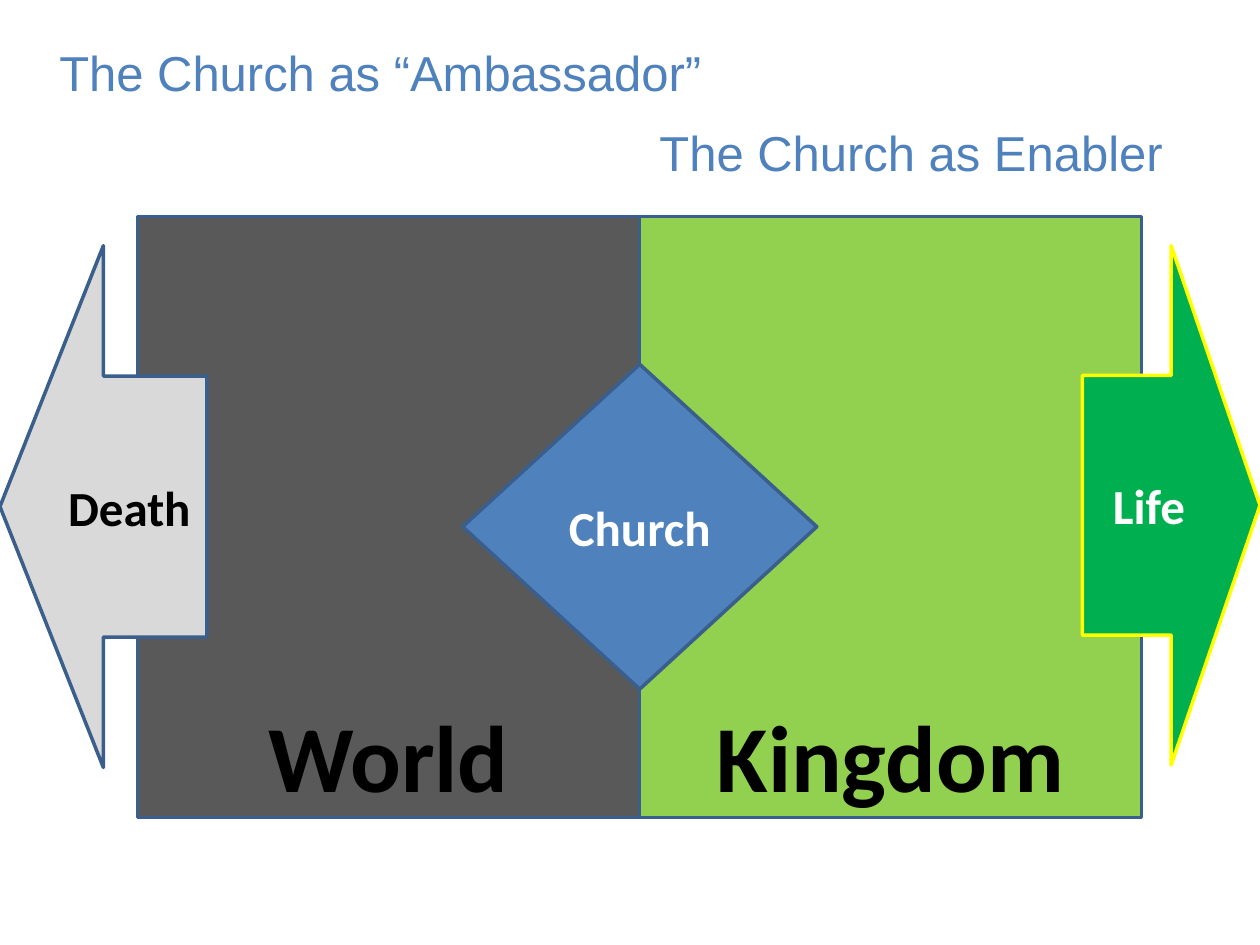
from pptx import Presentation
from pptx.dml.color import RGBColor
from pptx.enum.shapes import MSO_SHAPE as Kind
from pptx.enum.text import MSO_ANCHOR as Anchor, MSO_AUTO_SIZE as Fit, PP_ALIGN as Align
from pptx.util import Pt

BLUE, NAVY = "4F81BD", "3A5F8C"
BLACK, WHITE = "000000", "FFFFFF"


def rgb(code):
    return RGBColor.from_string(code)


def place(box):
    return [Pt(n) for n in box]


def write(frame, text, name, size, color, bold=False):
    """Fill the first paragraph of a frame and return it."""
    frame.word_wrap = True
    para = frame.paragraphs[0]
    para.text = text
    font = para.font
    font.name, font.size, font.bold = name, Pt(size), bold
    font.color.rgb = rgb(color)
    return para


def block(slide, kind, box, text, fill, color, size=28, line=NAVY, anchor=Anchor.MIDDLE):
    """Add a filled, outlined shape with a centred bold label."""
    shape = slide.shapes.add_shape(kind, *place(box))
    shape.shadow.inherit = False
    shape.fill.solid()
    shape.fill.fore_color.rgb = rgb(fill)
    shape.line.color.rgb = rgb(line)
    shape.line.width = Pt(2)
    frame = shape.text_frame
    frame.vertical_anchor = anchor
    write(frame, text, "Calibri", size, color, True).alignment = Align.CENTER


def title(slide, box, text):
    frame = slide.shapes.add_textbox(*place(box)).text_frame
    frame.margin_left = frame.margin_right = 0
    frame.margin_top = frame.margin_bottom = 0
    para = write(frame, text, "Arial", 28, BLUE)
    para.line_spacing = 0.9
    frame.auto_size = Fit.SHAPE_TO_FIT_TEXT


def main():
    deck = Presentation()
    deck.slide_width, deck.slide_height = Pt(720), Pt(540)
    slide = deck.slides.add_slide(deck.slide_layouts[6])

    left, top, width, height = 78.6, 123.8, 286.8, 343.4
    realms = [("World", "595959"), ("Kingdom", "92D050")]
    for i, (text, fill) in enumerate(realms):
        box = (left + i * width, top, width, height)
        block(slide, Kind.RECTANGLE, box, text, fill, BLACK, 54, anchor=Anchor.BOTTOM)

    block(slide, Kind.RIGHT_ARROW, (618.5, 140.4, 101.5, 296.8),
          "Life", "00B050", WHITE, line="FFFF00")
    block(slide, Kind.LEFT_ARROW, (0, 140.4, 118.2, 298.2),
          "Death", "D9D9D9", BLACK)
    block(slide, Kind.FLOWCHART_DECISION, (264.4, 208.2, 202.4, 185.6),
          "Church", BLUE, WHITE)

    title(slide, (33.9, 28.2, 455.8, 30.2), "The Church as “Ambassador”")
    title(slide, (376.8, 73.6, 320.4, 30.2), "The Church as Enabler")

    deck.save("out.pptx")


if __name__ == "__main__":
    main()
